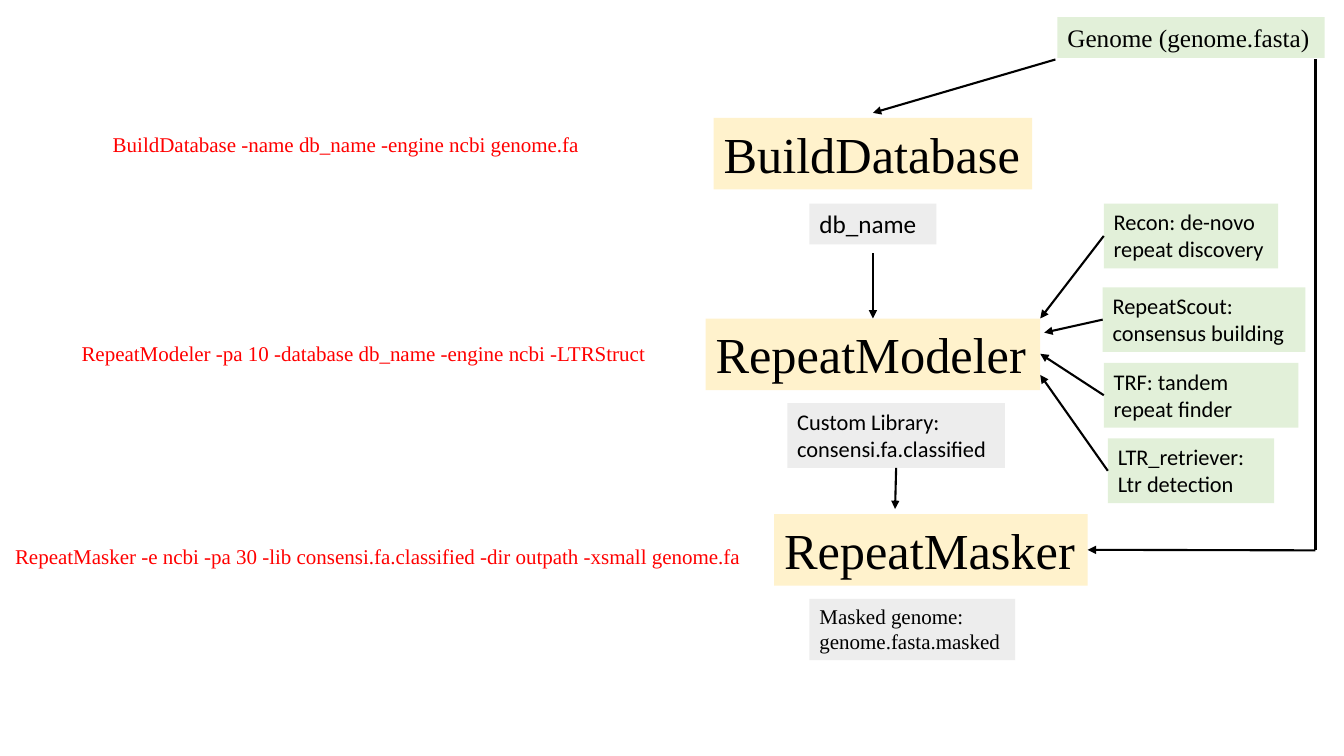
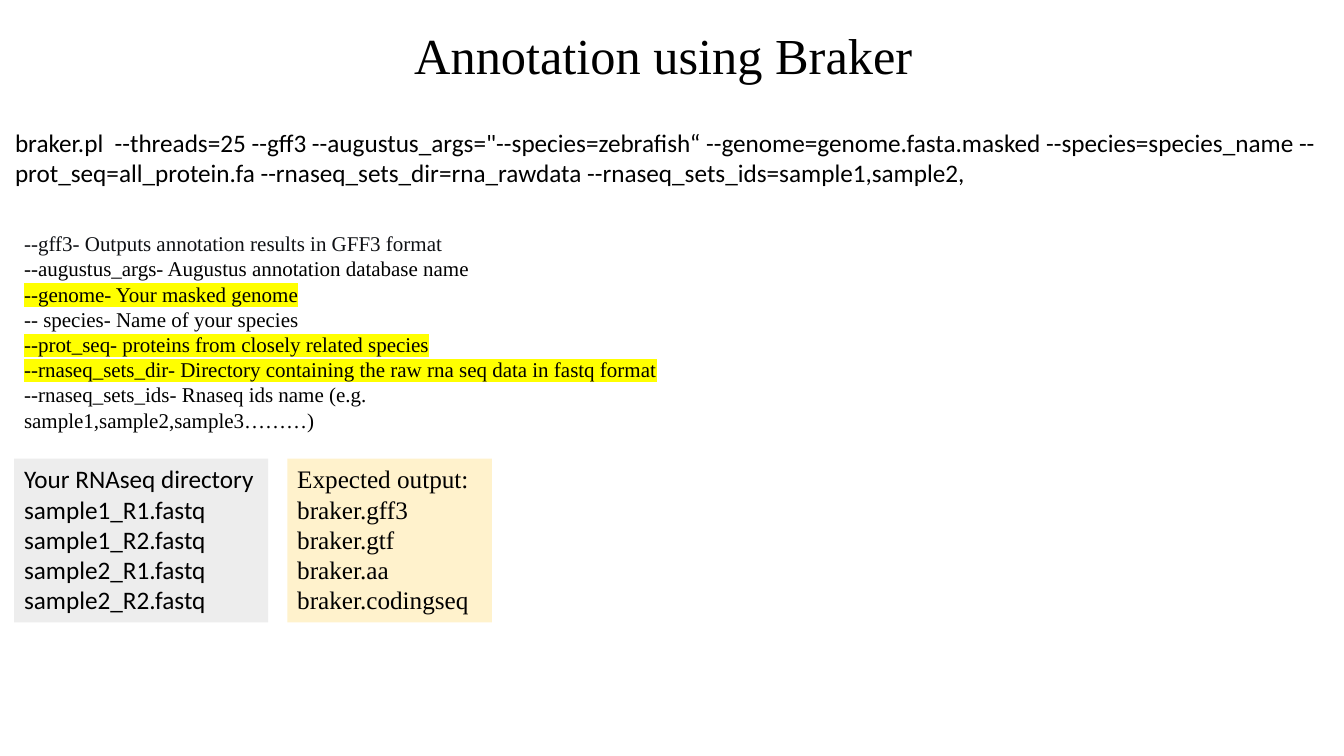
import pptx
import pptx.util
import pptx.dml.color
import pptx.enum.shapes
import pptx.enum.text
import pptx.oxml.ns
import lxml.etree

COLOURS = {
    "input": "E2F0D9", "step": "FFF2CC", "file": "EDEDED", "plain": "FFFFFF",
    "text": "000000", "command": "FF0000", "option": "0F1115", "marker": "FFFF00",
}
SERIF, SANS = "Times New Roman", "Calibri"
WIDTH, HEIGHT = pptx.util.Inches(13.333), pptx.util.Inches(7.5)
LINE_SPACING, PADDING = 1.22, 7.2  # line height in ems, box padding in points


# Lengths: x and y are percentages of the slide's width and height
def across(share):
    return round(WIDTH * share / 100)


def down(share):
    return round(HEIGHT * share / 100)


def colour(name):
    return pptx.dml.color.RGBColor.from_string(COLOURS[name])


def add_child(parent, tag, **attributes):
    return lxml.etree.SubElement(parent, pptx.oxml.ns.qn(tag), attributes)


# Kinds of element
def add_box(page, text, left, top, width, size, font=SERIF, fill=None, ink="text", lines=1):
    """Add text, on a filled rectangle if fill is given, as tall as its lines."""
    height = pptx.util.Pt(lines * size * LINE_SPACING + PADDING)
    place = across(left), down(top), across(width), height
    if fill:
        box = page.shapes.add_shape(pptx.enum.shapes.MSO_SHAPE.RECTANGLE, *place)
        box.shadow.inherit = False
        box.fill.solid()
        box.fill.fore_color.rgb = colour(fill)
        box.line.fill.background()
    else:
        box = page.shapes.add_textbox(*place)
    frame = box.text_frame
    frame.word_wrap = True
    frame.auto_size = pptx.enum.text.MSO_AUTO_SIZE.SHAPE_TO_FIT_TEXT
    frame.vertical_anchor = pptx.enum.text.MSO_ANCHOR.TOP
    frame.text = text
    for para in frame.paragraphs:
        para.alignment = pptx.enum.text.PP_ALIGN.LEFT
        para.font.size = pptx.util.Pt(size)
        para.font.name = font
        para.font.color.rgb = colour(ink)
    return box


def add_title(page, text, left, top, width, fill=None):
    return add_box(page, text, left, top, width, 36, fill=fill)


def add_step(page, name, left, top, width):
    return add_title(page, name, left, top, width, fill="step")


def add_command(page, text, left, top, width):
    return add_box(page, text, left, top, width, 15, ink="command")


def add_link(page, start, end, arrow=True):
    """Join two ends, each an (x, y) point or a (box, side) pair."""
    ends = [(0, 0) if hasattr(x, "shape_id") else (across(x), down(y))
            for x, y in (start, end)]
    link = page.shapes.add_connector(
        pptx.enum.shapes.MSO_CONNECTOR.STRAIGHT, *ends[0], *ends[1])
    for (target, side), connect in ((start, link.begin_connect), (end, link.end_connect)):
        if hasattr(target, "shape_id"):
            connect(target, side)
    link.line.color.rgb = colour("text")
    link.line.width = pptx.util.Pt(1.5)
    if arrow:
        add_child(link.line._get_or_add_ln(), "a:tailEnd", type="triangle")
    add_child(link._element.spPr, "a:effectLst")


def highlight(para):
    for span in para.runs:
        marker = add_child(span._r.get_or_add_rPr(), "a:highlight")
        add_child(marker, "a:srgbClr", val=COLOURS["marker"])


# Slides
def build_repeat_page(page):
    # Main steps and their commands
    genome = (78.68, 2.27, 19.88)
    add_box(page, "Genome (genome.fasta)", *genome, 18, fill="input")
    add_step(page, "BuildDatabase", 53.1, 15.6, 23.7)
    modeler = add_step(page, "RepeatModeler", 52.5, 42.13, 24.9)
    masker = add_step(page, "RepeatMasker", 57.6, 68, 23.33)
    for text, left, top, width in (
        ("BuildDatabase -name db_name -engine ncbi genome.fa", 7.65, 16.8, 36.53),
        ("RepeatModeler -pa 10 -database db_name -engine ncbi -LTRStruct", 5.33, 44.4, 46.95),
        ("RepeatMasker -e ncbi -pa 30 -lib consensi.fa.classified -dir outpath -xsmall genome.fa",
         0.38, 71.2, 55.5),
    ):
        add_command(page, text, left, top, width)

    # Files made by each step
    add_box(page, "db_name", 60.23, 26.93, 9.45, 18, SANS, "file")
    library = add_box(page, "Custom Library: consensi.fa.classified",
                      58.58, 53.33, 16.2, 16, SANS, "file", lines=2)
    add_box(page, "Masked genome:\ngenome.fasta.masked",
            60.23, 79.2, 15.3, 15, fill="file", lines=2)

    # Tools feeding the modeler
    for text, left, top, width, target in (
        ("Recon: de-novo repeat discovery", 82.13, 26.93, 12.98, (77.4, 42.13)),
        ("RepeatScout: consensus building", 82.05, 38, 15.08, (77.7, 44)),
        ("TRF: tandem repeat finder", 82.13, 48, 14.48, (77.4, 46.8)),
        ("LTR_retriever: Ltr detection", 82.43, 58, 12.38, (77.4, 49.6)),
    ):
        tool = add_box(page, text, left, top, width, 16, SANS, "input", lines=2)
        add_link(page, (tool, 1), target)

    # Flow from the genome and between the steps
    corner = (97.88, 72.8)
    add_link(page, (78.53, 7.87), (64.95, 14.93))
    add_link(page, (97.88, 7.87), corner, arrow=False)
    add_link(page, corner, (masker, 3))
    add_link(page, (64.95, 33.47), (modeler, 0))
    add_link(page, (library, 2), (66.6, 67.33))


def build_annotation_page(page):
    add_title(page, "Annotation using Braker", 30.08, 2.53, 39.83)
    add_box(page, 'braker.pl  --threads=25 --gff3 --augustus_args="--species=zebrafish“ '
            "--genome=genome.fasta.masked --species=species_name "
            "--prot_seq=all_protein.fa --rnaseq_sets_dir=rna_rawdata "
            "--rnaseq_sets_ids=sample1,sample2,", 0.38, 16.13, 99.23, 18, SANS, lines=2)

    # Options, with the user's own inputs highlighted
    options = (
        "--gff3- Outputs annotation results in GFF3 format",
        "--augustus_args- Augustus annotation database name",
        "--genome- Your masked genome",
        "-- species- Name of your species",
        "--prot_seq- proteins from closely related species",
        "--rnaseq_sets_dir- Directory containing the raw rna seq data in fastq format",
        "--rnaseq_sets_ids- Rnaseq ids name (e.g. sample1,sample2,sample3………)",
    )
    box = add_box(page, "\n".join(options), 1.05, 31.33, 48.98, 15,
                  fill="plain", lines=len(options))
    box.text_frame.vertical_anchor = pptx.enum.text.MSO_ANCHOR.MIDDLE
    paras = box.text_frame.paragraphs
    paras[0].font.color.rgb = colour("option")
    for para in paras:
        if para.text.startswith(("--genome", "--prot_seq", "--rnaseq_sets_dir")):
            highlight(para)

    # Input and output files
    samples = [f"sample{number}_R{read}.fastq" for number in (1, 2) for read in (1, 2)]
    outputs = [f"braker.{ending}" for ending in ("gff3", "gtf", "aa", "codingseq")]
    for heading, names, left, width, font, fill in (
        ("Your RNAseq directory", samples, 1.05, 18.9, SANS, "file"),
        ("Expected output:", outputs, 21.38, 15.23, SERIF, "step"),
    ):
        add_box(page, "\n".join([heading] + names), left, 60.67, width, 18,
                font, fill, lines=len(names) + 1)


def main():
    deck = pptx.Presentation()
    deck.slide_width, deck.slide_height = WIDTH, HEIGHT
    for build in (build_repeat_page, build_annotation_page):
        build(deck.slides.add_slide(deck.slide_layouts[6]))
    deck.save("out.pptx")


if __name__ == "__main__":
    main()
